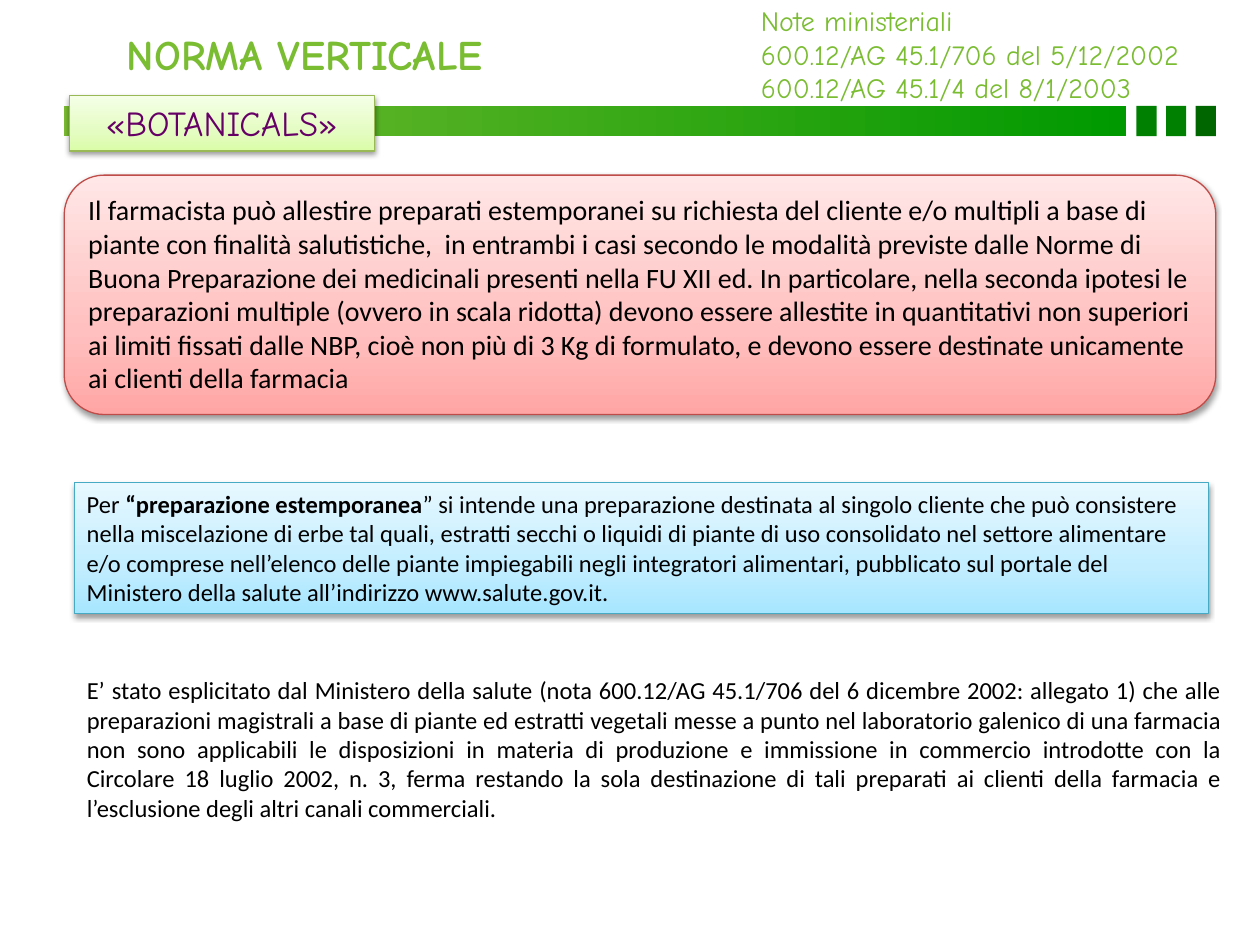
from copy import deepcopy

from lxml.etree import SubElement
from pptx import Presentation
from pptx.dml.color import RGBColor
from pptx.enum.shapes import MSO_SHAPE as Shape
from pptx.enum.text import MSO_ANCHOR as Anchor, MSO_AUTO_SIZE as AutoSize, PP_ALIGN as Align
from pptx.oxml.ns import qn
from pptx.util import Inches, Pt

GREEN, PURPLE, BLACK = "7ABC32", "660066", "000000"
HEADING_FONT, BODY_FONT = "Comic Neue", "Calibri"
LIME = [(0, "DAFDA7"), (0.35, "E4FCC2"), (1, "F5FFE7")]
RED = [(0, "FFA6A5"), (0.35, "FFC0BF"), (1, "FFE7E7")]
BLUE = [(0, "A7E6FF"), (0.35, "C1EDFF"), (1, "E7F8FF")]

PREPARATIONS = (
    "Il farmacista può allestire preparati estemporanei su richiesta del cliente e/o multipli "
    "a base di piante con finalità salutistiche,  in entrambi i casi secondo le modalità "
    "previste dalle Norme di Buona Preparazione dei medicinali presenti nella FU XII ed. "
    "In particolare, nella seconda ipotesi le preparazioni multiple (ovvero in scala ridotta) "
    "devono essere allestite in quantitativi non superiori ai limiti fissati dalle NBP, cioè "
    "non più di 3 Kg di formulato, e devono essere destinate unicamente ai clienti della farmacia"
)
DEFINITION = [
    ("Per ", False),
    ("“preparazione estemporanea", True),
    ("” si intende una preparazione destinata al singolo cliente che può consistere nella "
     "miscelazione di erbe tal quali, estratti secchi o liquidi di piante di uso consolidato nel "
     "settore alimentare e/o comprese nell’elenco delle piante impiegabili negli integratori "
     "alimentari, pubblicato sul portale del Ministero della salute all’indirizzo "
     "www.salute.gov.it.", False),
]
MINISTRY_NOTE = (
    "E’ stato esplicitato dal Ministero della salute (nota 600.12/AG 45.1/706 del 6 dicembre "
    "2002: allegato 1) che alle preparazioni magistrali a base di piante ed estratti vegetali "
    "messe a punto nel laboratorio galenico di una farmacia non sono applicabili le disposizioni "
    "in materia di produzione e immissione in commercio introdotte con la Circolare 18 luglio "
    "2002, n. 3, ferma restando la sola destinazione di tali preparati ai clienti della farmacia "
    "e l’esclusione degli altri canali commerciali."
)


def color(value):
    return RGBColor.from_string(value)


def write(shape, paragraphs, size=14, font=BODY_FONT, ink=BLACK, bold=False,
          align=Align.LEFT, wrap=True):
    """Fill a shape; each paragraph is a string or a list of (text, bold) runs."""
    frame = shape.text_frame
    frame.word_wrap = wrap
    frame.auto_size = AutoSize.SHAPE_TO_FIT_TEXT
    frame.vertical_anchor = Anchor.TOP
    for index, content in enumerate(paragraphs):
        paragraph = frame.add_paragraph() if index else frame.paragraphs[0]
        paragraph.alignment = align
        runs = [(content, bold)] if isinstance(content, str) else content
        for text, is_bold in runs:
            run = paragraph.add_run()
            run.text = text
            run.font.name, run.font.size, run.font.bold = font, Pt(size), is_bold
            run.font.color.rgb = color(ink)


class SlideBuilder:
    def __init__(self, slide):
        self.slide = slide

    def shape(self, left, top, width, height, fill, kind=Shape.RECTANGLE, parent=None):
        """Add a borderless shape; fill is a hex string or a colour for solid fill, or None."""
        shapes = (parent or self.slide).shapes
        shape = shapes.add_shape(kind, Inches(left), Inches(top), Inches(width), Inches(height))
        shape.shadow.inherit = False
        shape.line.fill.background()
        if isinstance(fill, str):
            shape.fill.solid()
            shape.fill.fore_color.rgb = color(fill)
        return shape

    def gradient(self, shape, stops, angle):
        """Apply (position, colour) stops; the angle runs counter-clockwise."""
        shape.fill.gradient()
        shape.fill.gradient_angle = angle
        stop_list = next(shape._element.spPr.iter(qn("a:gsLst")))
        for _ in stops[2:]:
            stop_list.append(deepcopy(stop_list[0]))
        for stop, (position, value) in zip(shape.fill.gradient_stops, stops):
            stop.position = position
            stop.color.rgb = color(value)

    def panel(self, left, top, width, height, stops, border, kind=Shape.RECTANGLE):
        """Add a bordered gradient box with a soft shadow below it."""
        shape = self.shape(left, top, width, height, None, kind)
        self.gradient(shape, stops, 90)
        shape.line.color.rgb = color(border)
        shape.line.width = Pt(0.75)
        effects = shape._element.spPr.find(qn("a:effectLst"))
        shadow = SubElement(effects, qn("a:outerShdw"), blurRad=str(Pt(3.1)),
                            dist=str(Pt(1.6)), dir="5400000", rotWithShape="0")
        shade = SubElement(shadow, qn("a:srgbClr"), val=BLACK)
        SubElement(shade, qn("a:alpha"), val="38000")
        return shape

    def text(self, left, top, width, height, paragraphs, **style):
        box = self.slide.shapes.add_textbox(
            Inches(left), Inches(top), Inches(width), Inches(height))
        write(box, paragraphs, **style)

    def title_bar(self, top=0.84, height=0.24):
        group = self.slide.shapes.add_group_shape()
        bar = self.shape(0.51, top, 8.43, height, None, parent=group)
        self.gradient(bar, [(0, GREEN), (1, "009900")], 0)
        for index, fill in enumerate(["008000", "008000", "006600"]):
            self.shape(9.02 + index * 0.235, top, 0.16, height, fill, parent=group)


def main():
    presentation = Presentation()
    presentation.slide_width, presentation.slide_height = Inches(10), Inches(7.5)
    builder = SlideBuilder(presentation.slides.add_slide(presentation.slide_layouts[6]))

    builder.title_bar()
    label = builder.panel(0.55, 0.76, 2.42, 0.44, LIME, "98B955")
    write(label, ["«BOTANICALS»"], size=20, font=HEADING_FONT, ink=PURPLE,
          align=Align.CENTER, wrap=False)
    builder.text(0.91, 0.18, 3.54, 0.5, ["NORMA VERTICALE"], size=24,
                 font=HEADING_FONT, ink=GREEN, bold=True, wrap=False)
    references = ["Note ministeriali", "600.12/AG 45.1/706 del 5/12/2002",
                  "600.12/AG 45.1/4 del 8/1/2003"]
    builder.text(5.94, -0.02, 3.97, 0.91, references, size=16,
                 font=HEADING_FONT, ink=GREEN, wrap=False)

    rules = builder.panel(0.51, 1.39, 9.14, 1.9, RED, "BF4C48", Shape.ROUNDED_RECTANGLE)
    write(rules, [PREPARATIONS], size=16)
    builder.text(0.59, 5.31, 9.21, 1.28, [MINISTRY_NOTE], align=Align.JUSTIFY)
    definition = builder.panel(0.59, 3.83, 9, 1.04, BLUE, "46AAC5")
    write(definition, [DEFINITION])

    presentation.save("out.pptx")


if __name__ == "__main__":
    main()
